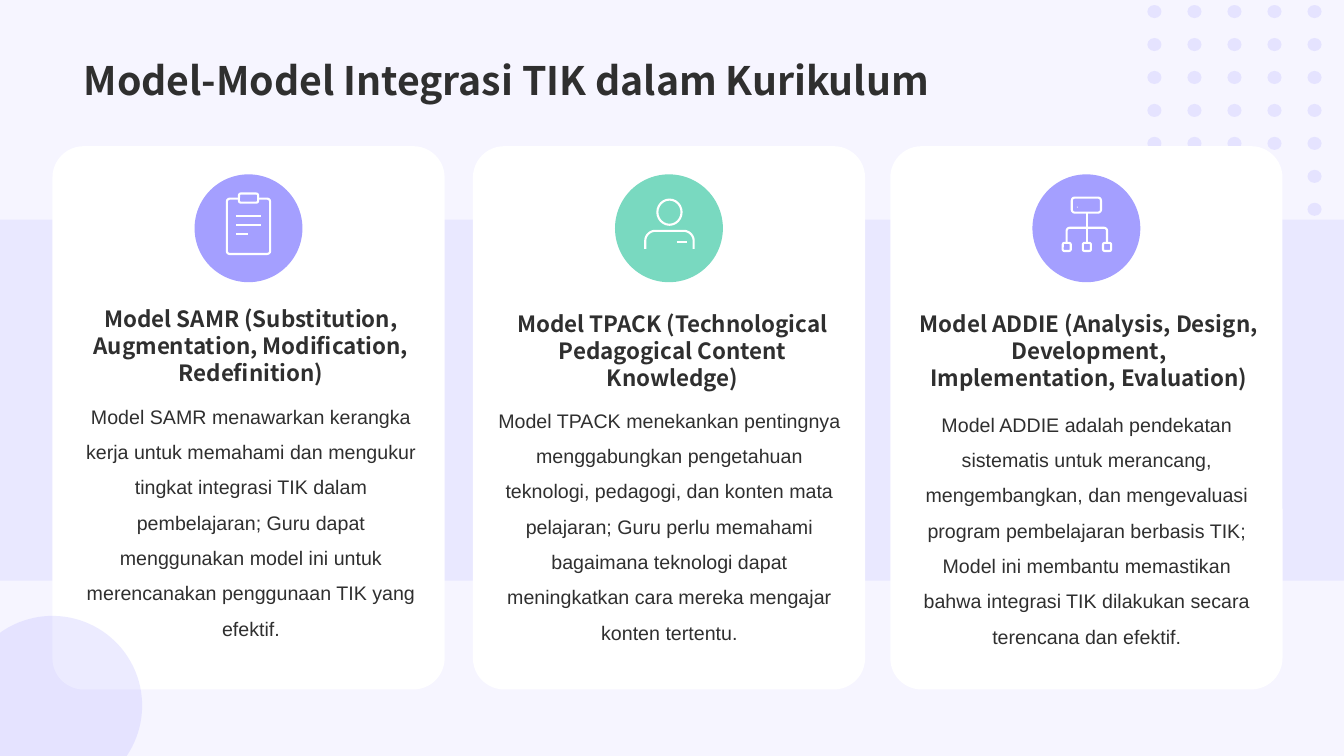
import math

import pptx
import pptx.util
import pptx.dml.color
import pptx.enum.shapes
import pptx.enum.text
import pptx.oxml.ns
from lxml import etree

Inches = pptx.util.Inches
RGBColor = pptx.dml.color.RGBColor
SHAPE = pptx.enum.shapes.MSO_SHAPE
ALIGN = pptx.enum.text.PP_ALIGN
ANCHOR = pptx.enum.text.MSO_ANCHOR
qn = pptx.oxml.ns.qn

PURPLE = RGBColor(0xA4, 0x9F, 0xFF)
GREEN = RGBColor(0x79, 0xD9, 0xC0)
PALE = RGBColor(0xF6, 0xF5, 0xFF)
WHITE = RGBColor(0xFF, 0xFF, 0xFF)
DARK = RGBColor(0x2F, 0x2F, 0x2F)
HEAD_FONT = "Noto Sans CJK SC"
BODY_FONT = "Arial"

prs = pptx.Presentation()
prs.slide_width, prs.slide_height = Inches(13.33), Inches(7.5)
s = prs.slides.add_slide(prs.slide_layouts[5])
s.background.fill.solid()
s.background.fill.fore_color.rgb = PALE


def paint(sp, color=None, alpha=None, line=None):
    """Fill a shape, or leave it hollow, with an optional outline."""
    sp.shadow.inherit = False
    if color is None:
        sp.fill.background()
    else:
        sp.fill.solid()
        sp.fill.fore_color.rgb = color
    if alpha:
        clr = sp.fill._xPr.find(qn("a:solidFill"))[0]
        etree.SubElement(clr, qn("a:alpha"), val=str(alpha * 1000))
    if line is None:
        sp.line.fill.background()
    else:
        sp.line.color.rgb = line
        sp.line.width = pptx.util.Pt(1.5)


def arc(cx, cy, radius, start, end):
    """Points along an arc, angles in degrees, clockwise from the right."""
    steps = 48
    angles = [math.radians(start + (end - start) * i / steps) for i in range(steps + 1)]
    return [(cx + radius * math.cos(a), cy + radius * math.sin(a)) for a in angles]


# Dot pattern: the last two columns run further down
for col, rows in enumerate([5, 5, 5, 7, 7]):
    for row in range(rows):
        sp = s.shapes.add_shape(SHAPE.OVAL, Inches(11.38 + 0.397 * col),
                                Inches(0.05 + 0.327 * row), Inches(0.14), Inches(0.13))
        paint(sp, PURPLE, 20)

# Band behind the cards
sp = s.shapes.add_shape(SHAPE.RECTANGLE, 0, Inches(2.18), prs.slide_width, Inches(3.58))
paint(sp, PURPLE, 15)

# Cards: left, badge colour, (left, top, heading), (left, top, body)
cards = [
    (0.52, PURPLE,
     (0.69, 2.98, "Model SAMR (Substitution, Augmentation, Modification, Redefinition)"),
     (0.69, 3.85, "Model SAMR menawarkan kerangka kerja untuk memahami dan mengukur tingkat "
      "integrasi TIK dalam pembelajaran; Guru dapat menggunakan model ini untuk "
      "merencanakan penggunaan TIK yang efektif.")),
    (4.69, GREEN,
     (4.87, 3.03, "Model TPACK (Technological Pedagogical Content Knowledge)"),
     (4.84, 3.89, "Model TPACK menekankan pentingnya menggabungkan pengetahuan teknologi, "
      "pedagogi, dan konten mata pelajaran; Guru perlu memahami bagaimana teknologi "
      "dapat meningkatkan cara mereka mengajar konten tertentu.")),
    (8.83, PURPLE,
     (9.0, 3.03, "Model ADDIE (Analysis, Design, Development, Implementation, Evaluation)"),
     (8.98, 3.93, "Model ADDIE adalah pendekatan sistematis untuk merancang, mengembangkan, "
      "dan mengevaluasi program pembelajaran berbasis TIK; Model ini membantu "
      "memastikan bahwa integrasi TIK dilakukan secara terencana dan efektif.")),
]
for left, badge, heading, body in cards:
    sp = s.shapes.add_shape(SHAPE.ROUNDED_RECTANGLE, Inches(left), Inches(1.45),
                            Inches(3.89), Inches(5.39))
    sp.adjustments[0] = 0.08
    paint(sp, WHITE)
    sp = s.shapes.add_shape(SHAPE.OVAL, Inches(left + 1.41), Inches(1.73),
                            Inches(1.07), Inches(1.07))
    paint(sp, badge)
    for (x, y, text), height, font, size, bold, spacing in [
            (heading, 0.86, HEAD_FONT, 16, True, None),
            (body, 2.6, BODY_FONT, 14, False, 1.5)]:
        tf = s.shapes.add_textbox(Inches(x), Inches(y), Inches(3.6), Inches(height)).text_frame
        tf.word_wrap = True
        p = tf.paragraphs[0]
        p.alignment = ALIGN.CENTER
        p.line_spacing = spacing
        r = p.add_run()
        r.text = text
        r.font.name, r.font.size, r.font.bold = font, pptx.util.Pt(size), bold
        r.font.color.rgb = DARK

# Icon outlines: shape, left, top, width, height, fill
icon_parts = [
    (SHAPE.ROUNDED_RECTANGLE, 2.25, 1.97, 0.43, 0.55, PURPLE),  # clipboard
    (SHAPE.ROUNDED_RECTANGLE, 2.37, 1.92, 0.19, 0.09, PURPLE),  # clip
    (SHAPE.OVAL, 6.52, 1.98, 0.24, 0.25, None),  # head
    (SHAPE.ROUNDED_RECTANGLE, 10.63, 1.96, 0.29, 0.15, None),  # root node
    (SHAPE.OVAL, 10.68, 2.05, 0.01, 0.01, WHITE),  # root node light
] + [(SHAPE.ROUNDED_RECTANGLE, 10.54 + 0.2 * i, 2.41, 0.08, 0.08, None) for i in range(3)]
for kind, x, y, w, h, fill in icon_parts:
    sp = s.shapes.add_shape(kind, Inches(x), Inches(y), Inches(w), Inches(h))
    if kind == SHAPE.ROUNDED_RECTANGLE:
        sp.adjustments[0] = 0.07 if h > 0.5 else 0.2
    paint(sp, fill, line=None if w < 0.05 else WHITE)

# Icon strokes: clipboard text, person badge, tree trunk
for x1, y1, x2, y2 in [(2.34, 2.14, 2.59, 2.14), (2.34, 2.23, 2.59, 2.23),
                       (2.34, 2.32, 2.46, 2.32), (6.71, 2.4, 6.81, 2.4),
                       (10.78, 2.11, 10.78, 2.41)]:
    c = s.shapes.add_connector(pptx.enum.shapes.MSO_CONNECTOR.STRAIGHT,
                               Inches(x1), Inches(y1), Inches(x2), Inches(y2))
    c.line.color.rgb = WHITE
    c.line.width = pptx.util.Pt(1.5)
    etree.SubElement(c._element.spPr, qn("a:effectLst"))

# Freeforms: shoulders, tree branches, corner circle cut by the slide edges
shoulders = [(6.4, 2.47), *arc(6.5, 2.39, 0.1, 180, 270), *arc(6.78, 2.39, 0.1, 270, 360), (6.88, 2.47)]
branches = [(10.58, 2.41), *arc(10.61, 2.29, 0.03, 180, 270), *arc(10.95, 2.29, 0.03, 270, 360), (10.98, 2.41)]
corner = [*arc(0.52, 7, 0.89, 234.3, 394.2), (0, 7.5)]
for points, closed in [(shoulders, False), (branches, False), (corner, True)]:
    points = [(Inches(x), Inches(y)) for x, y in points]
    fb = s.shapes.build_freeform(*points[0])
    fb.add_line_segments(points[1:], close=closed)
    sp = fb.convert_to_shape()
    if closed:
        paint(sp, PURPLE, 20)
    else:
        paint(sp, line=WHITE)

# Title
sp = s.shapes.title
sp.left, sp.top, sp.width, sp.height = Inches(0.73), Inches(0.1), Inches(11.88), Inches(0.98)
tf = sp.text_frame
tf.word_wrap = True
tf.vertical_anchor = ANCHOR.BOTTOM
p = tf.paragraphs[0]
p.alignment = ALIGN.LEFT
r = p.add_run()
r.text = "Model-Model Integrasi TIK dalam Kurikulum"
r.font.name, r.font.size, r.font.bold = HEAD_FONT, pptx.util.Pt(28), True
r.font.color.rgb = DARK

prs.save("out.pptx")
